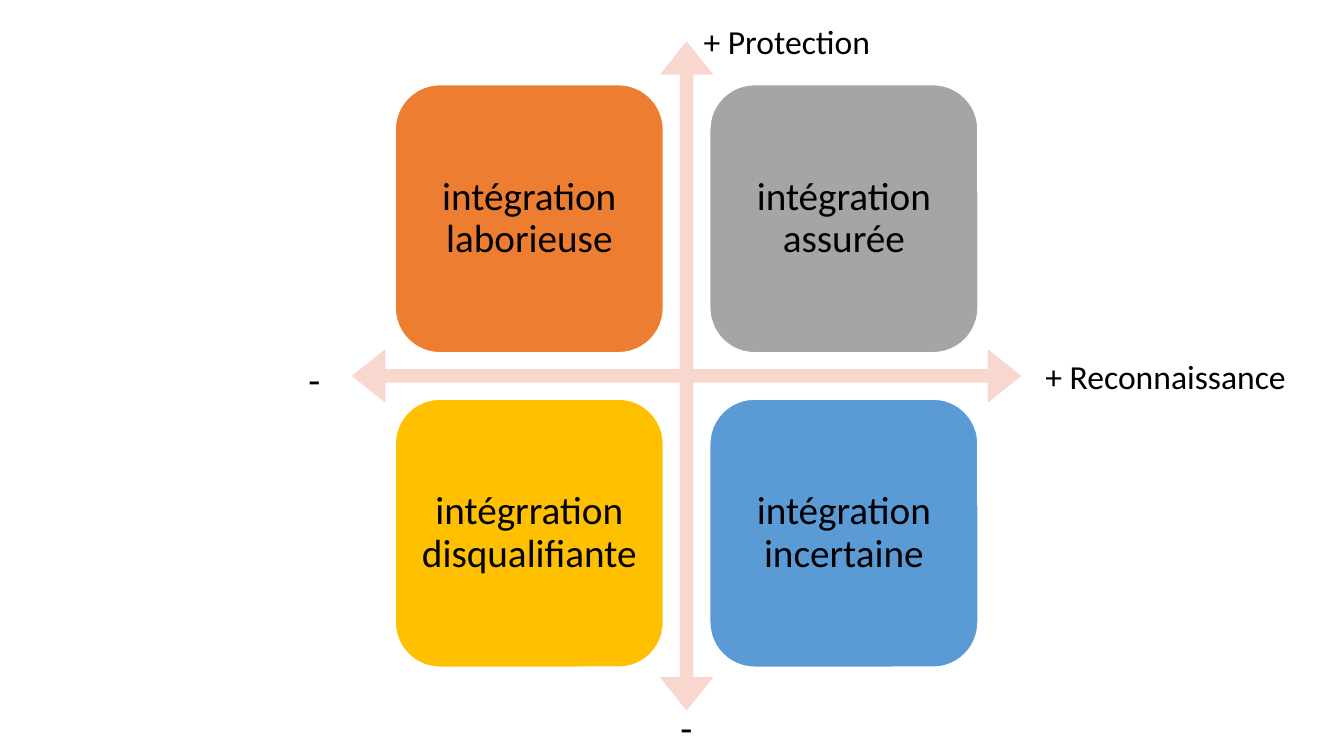
import pptx
import pptx.dml.color
import pptx.enum.shapes
import pptx.enum.text
import pptx.util

Inches = pptx.util.Inches
Pt = pptx.util.Pt
RGBColor = pptx.dml.color.RGBColor
MSO_SHAPE = pptx.enum.shapes.MSO_SHAPE

BLACK = RGBColor(0x00, 0x00, 0x00)
WHITE = RGBColor(0xFF, 0xFF, 0xFF)
PINK = RGBColor(0xF8, 0xD7, 0xCE)
ORANGE = RGBColor(0xED, 0x7D, 0x31)
GRAY = RGBColor(0xA5, 0xA5, 0xA5)
GOLD = RGBColor(0xFF, 0xC0, 0x00)
BLUE = RGBColor(0x5B, 0x9B, 0xD5)

QUADRANTS = [
    [("intégration laborieuse", ORANGE), ("intégration assurée", GRAY)],
    [("intégrration disqualifiante", GOLD), ("intégration incertaine", BLUE)],
]
AXIS_LABELS = [
    ("+ Reconnaissance", 10.27, 3.48, 2.61, 0.5, 24),
    ("+ Protection", 6.88, 0.16, 1.87, 0.5, 24),
    ("-", 2.96, 3.48, 0.32, 0.57, 28),
    ("-", 6.65, 6.93, 0.32, 0.57, 28),
]

AXES_LEFT, AXES_TOP, AXES_SIZE = 3.49, 0.41, 6.64
AXES_ADJUSTMENTS = (0.02, 0.04, 0.05)
QUADRANT_OFFSET, QUADRANT_SIZE, QUADRANT_PITCH = 0.43, 2.66, 3.12
QUADRANT_INSET = 0.12


def add_filled_shape(slide, kind, left, top, size, color):
    shape = slide.shapes.add_shape(
        kind, Inches(left), Inches(top), Inches(size), Inches(size))
    shape.shadow.inherit = False
    shape.fill.solid()
    shape.fill.fore_color.rgb = color
    return shape


def write_text(shape, text, size):
    paragraph = shape.text_frame.paragraphs[0]
    paragraph.text = text
    paragraph.font.name = "Calibri"
    paragraph.font.size = Pt(size)
    paragraph.font.color.rgb = BLACK
    return paragraph


def add_axes(slide):
    axes = add_filled_shape(
        slide, MSO_SHAPE.QUAD_ARROW, AXES_LEFT, AXES_TOP, AXES_SIZE, PINK)
    axes.line.fill.background()
    for index, adjustment in enumerate(AXES_ADJUSTMENTS):
        axes.adjustments[index] = adjustment


def add_quadrant(slide, row, column, text, color):
    left = AXES_LEFT + QUADRANT_OFFSET + column * QUADRANT_PITCH
    top = AXES_TOP + QUADRANT_OFFSET + row * QUADRANT_PITCH
    quadrant = add_filled_shape(
        slide, MSO_SHAPE.ROUNDED_RECTANGLE, left, top, QUADRANT_SIZE, color)
    quadrant.line.color.rgb = WHITE
    quadrant.line.width = Pt(1)
    frame = quadrant.text_frame
    frame.word_wrap = True
    frame.vertical_anchor = pptx.enum.text.MSO_ANCHOR.MIDDLE
    frame.margin_left = frame.margin_right = Inches(QUADRANT_INSET)
    frame.margin_top = frame.margin_bottom = Inches(QUADRANT_INSET)
    paragraph = write_text(quadrant, text, 28)
    paragraph.alignment = pptx.enum.text.PP_ALIGN.CENTER
    paragraph.line_spacing = 0.9


def add_axis_label(slide, text, left, top, width, height, size):
    label = slide.shapes.add_textbox(
        Inches(left), Inches(top), Inches(width), Inches(height))
    label.text_frame.word_wrap = False
    label.text_frame.auto_size = pptx.enum.text.MSO_AUTO_SIZE.SHAPE_TO_FIT_TEXT
    write_text(label, text, size)


def main():
    presentation = pptx.Presentation()
    presentation.slide_width = Inches(13.33)
    presentation.slide_height = Inches(7.5)
    slide = presentation.slides.add_slide(presentation.slide_layouts[6])
    add_axes(slide)
    for row, quadrants in enumerate(QUADRANTS):
        for column, (text, color) in enumerate(quadrants):
            add_quadrant(slide, row, column, text, color)
    for label in AXIS_LABELS:
        add_axis_label(slide, *label)
    presentation.save("out.pptx")


if __name__ == "__main__":
    main()
